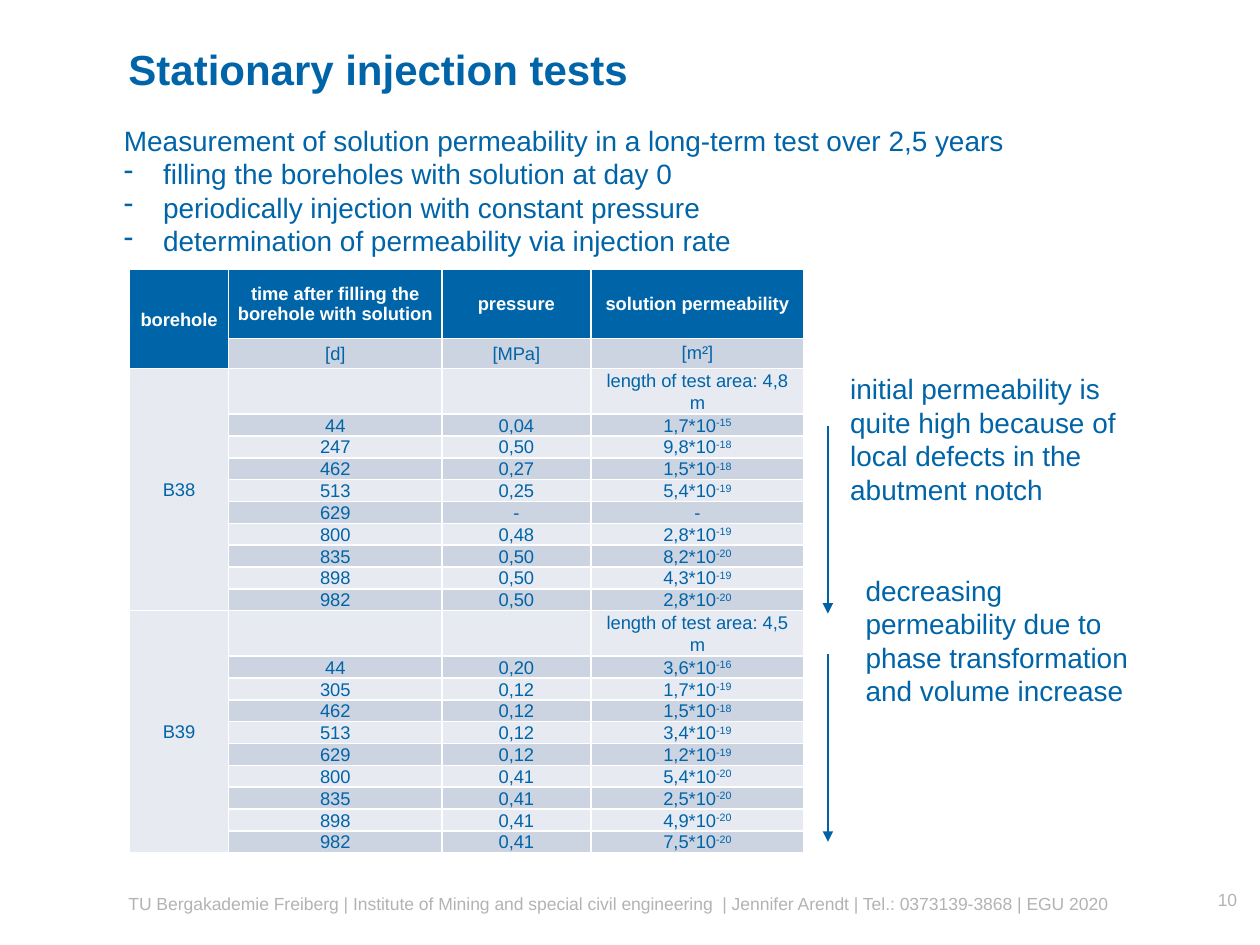
from dataclasses import dataclass
from typing import Optional

import pptx
import pptx.dml.color
import pptx.enum.shapes
import pptx.enum.text
import pptx.oxml.ns
import pptx.util
from lxml import etree

Cm = pptx.util.Cm
Pt = pptx.util.Pt
RGBColor = pptx.dml.color.RGBColor
Align = pptx.enum.text.PP_ALIGN
Anchor = pptx.enum.text.MSO_ANCHOR
qn = pptx.oxml.ns.qn

BLUE = RGBColor(0x00, 0x64, 0xA8)
ARROW_BLUE = RGBColor(0x00, 0x62, 0xA4)
GREY = RGBColor(0xB3, 0xB3, 0xB3)
WHITE = RGBColor(0xFF, 0xFF, 0xFF)
DARK_BAND = RGBColor(0xCC, 0xD3, 0xE1)
LIGHT_BAND = RGBColor(0xE7, 0xEA, 0xF1)
FONT = "Arial"


@dataclass
class TextBlock:
    left: float
    top: float
    width: float
    height: float
    lines: list[str]
    size: float = 16
    color: RGBColor = BLUE
    bold: bool = False
    align: Align = Align.LEFT
    anchor: Anchor = Anchor.TOP
    inset: bool = True
    bulleted_from: Optional[int] = None


@dataclass
class Borehole:
    name: str
    test_area: str
    measurements: list[tuple[str, str, str]]


@dataclass
class Arrow:
    x: float
    top: float
    bottom: float


TEXT_BLOCKS = [
    TextBlock(2.59, 0.51, 20.29, 1.75, ["Stationary injection tests"],
              size=24, bold=True, anchor=Anchor.MIDDLE, inset=False),
    TextBlock(2.59, 18.01, 20.29, 0.61,
              ["TU Bergakademie Freiberg | Institute of Mining and special civil engineering"
               "  | Jennifer Arendt | Tel.: 0373139-3868 | EGU 2020"],
              size=10, color=GREY, inset=False),
    TextBlock(22.91, 17.93, 2.03, 0.61, ["10"],
              size=10, color=GREY, align=Align.RIGHT, inset=False),
    TextBlock(2.25, 2.36, 21, 3,
              ["Measurement of solution permeability in a long-term test over 2,5 years",
               "filling the boreholes with solution at day 0",
               "periodically injection with constant pressure",
               "determination of permeability via injection rate"], bulleted_from=1),
    TextBlock(17.2, 11.43, 6.2, 3,
              ["decreasing permeability due to phase transformation and volume increase"]),
    TextBlock(16.89, 7.37, 6.6, 3,
              ["initial permeability is quite high because of local defects in the abutment notch"]),
]

ARROWS = [Arrow(16.69, 8.58, 12.37), Arrow(16.69, 13.18, 16.97)]

HEADINGS = ["borehole", "time after filling the borehole with solution",
            "pressure", "solution permeability"]
UNITS = ["", "[d]", "[MPa]", "[m²]"]
COLUMN_WIDTHS = [2.0, 4.3, 3.0, 4.3]
HEADING_HEIGHT, UNIT_HEIGHT, AREA_HEIGHT, DATA_HEIGHT = 1.39, 0.61, 0.92, 0.44

# A caret separates a power of ten from its exponent.
BOREHOLES = [
    Borehole("B38", "length of test area: 4,8 m", [
        ("44", "0,04", "1,7*10^-15"), ("247", "0,50", "9,8*10^-18"),
        ("462", "0,27", "1,5*10^-18"), ("513", "0,25", "5,4*10^-19"),
        ("629", "-", "-"), ("800", "0,48", "2,8*10^-19"),
        ("835", "0,50", "8,2*10^-20"), ("898", "0,50", "4,3*10^-19"),
        ("982", "0,50", "2,8*10^-20")]),
    Borehole("B39", "length of test area: 4,5 m", [
        ("44", "0,20", "3,6*10^-16"), ("305", "0,12", "1,7*10^-19"),
        ("462", "0,12", "1,5*10^-18"), ("513", "0,12", "3,4*10^-19"),
        ("629", "0,12", "1,2*10^-19"), ("800", "0,41", "5,4*10^-20"),
        ("835", "0,41", "2,5*10^-20"), ("898", "0,41", "4,9*10^-20"),
        ("982", "0,41", "7,5*10^-20")]),
]


def set_font(paragraph, size: float, color: RGBColor, bold: bool = False) -> None:
    font = paragraph.font
    font.name, font.size, font.bold = FONT, Pt(size), bold
    font.color.rgb = color


def add_dash_bullet(paragraph) -> None:
    properties = paragraph._p.get_or_add_pPr()
    properties.set("marL", str(Cm(0.79)))
    properties.set("indent", str(-Cm(0.79)))
    etree.SubElement(properties, qn("a:buChar")).set("char", "-")


def draw_text(slide, block: TextBlock) -> None:
    box = slide.shapes.add_textbox(
        Cm(block.left), Cm(block.top), Cm(block.width), Cm(block.height))
    frame = box.text_frame
    frame.word_wrap = True
    frame.vertical_anchor = block.anchor
    if not block.inset:
        frame.margin_left = frame.margin_right = frame.margin_top = frame.margin_bottom = 0
    frame.text = "\n".join(block.lines)
    for index, paragraph in enumerate(frame.paragraphs):
        if block.bulleted_from is not None and index >= block.bulleted_from:
            add_dash_bullet(paragraph)
        paragraph.alignment = block.align
        set_font(paragraph, block.size, block.color, block.bold)


def fill_cell(cell, text: str, fill: RGBColor, color: RGBColor = BLUE,
              bold: bool = False, spacing: float = 1.07) -> None:
    cell.fill.solid()
    cell.fill.fore_color.rgb = fill
    cell.margin_left = cell.margin_right = Cm(0.18)
    cell.margin_top = cell.margin_bottom = 0
    cell.vertical_anchor = Anchor.MIDDLE
    paragraph = cell.text_frame.paragraphs[0]
    paragraph.alignment = Align.CENTER
    paragraph.line_spacing = spacing
    set_font(paragraph, 10.5, color, bold)
    base, _, exponent = text.partition("^")
    if base:
        paragraph.add_run().text = base
    if exponent:
        power = paragraph.add_run()
        power.text = exponent
        power._r.get_or_add_rPr().set("baseline", "30000")


def draw_measurements(slide) -> None:
    rows = [HEADINGS, UNITS]
    heights = [HEADING_HEIGHT, UNIT_HEIGHT]
    spans = [(0, 1)]
    for borehole in BOREHOLES:
        spans.append((len(rows), len(rows) + len(borehole.measurements)))
        rows.append([borehole.name, "", "", borehole.test_area])
        rows.extend(["", *measurement] for measurement in borehole.measurements)
        heights += [AREA_HEIGHT] + [DATA_HEIGHT] * len(borehole.measurements)

    table = slide.shapes.add_table(
        len(rows), len(HEADINGS), Cm(2.61), Cm(5.43),
        Cm(sum(COLUMN_WIDTHS)), Cm(sum(heights))).table
    for column, width in zip(table.columns, COLUMN_WIDTHS):
        column.width = Cm(width)
    for index, (texts, height) in enumerate(zip(rows, heights)):
        table.rows[index].height = Cm(height)
        band = DARK_BAND if index % 2 else LIGHT_BAND
        for column, text in enumerate(texts):
            cell = table.cell(index, column)
            if index == 0:
                fill_cell(cell, text, BLUE, WHITE, bold=True,
                          spacing=1.0 if column == 1 else 1.07)
            else:
                fill_cell(cell, text, band, spacing=1.0 if text == "[m²]" else 1.07)
    for first, last in spans:
        table.cell(first, 0).merge(table.cell(last, 0))


def draw_arrow(slide, arrow: Arrow) -> None:
    connector = slide.shapes.add_connector(
        pptx.enum.shapes.MSO_CONNECTOR.STRAIGHT,
        Cm(arrow.x), Cm(arrow.top), Cm(arrow.x), Cm(arrow.bottom))
    connector.line.color.rgb = ARROW_BLUE
    connector.line.width = Pt(1.5)
    etree.SubElement(connector.line._get_or_add_ln(), qn("a:tailEnd")).set("type", "triangle")
    etree.SubElement(connector._element.spPr, qn("a:effectLst"))


def main() -> None:
    presentation = pptx.Presentation()
    presentation.slide_width, presentation.slide_height = Cm(25.4), Cm(19.05)
    slide = presentation.slides.add_slide(presentation.slide_layouts[6])
    draw_measurements(slide)
    for block in TEXT_BLOCKS:
        draw_text(slide, block)
    for arrow in ARROWS:
        draw_arrow(slide, arrow)
    presentation.save("out.pptx")


if __name__ == "__main__":
    main()
